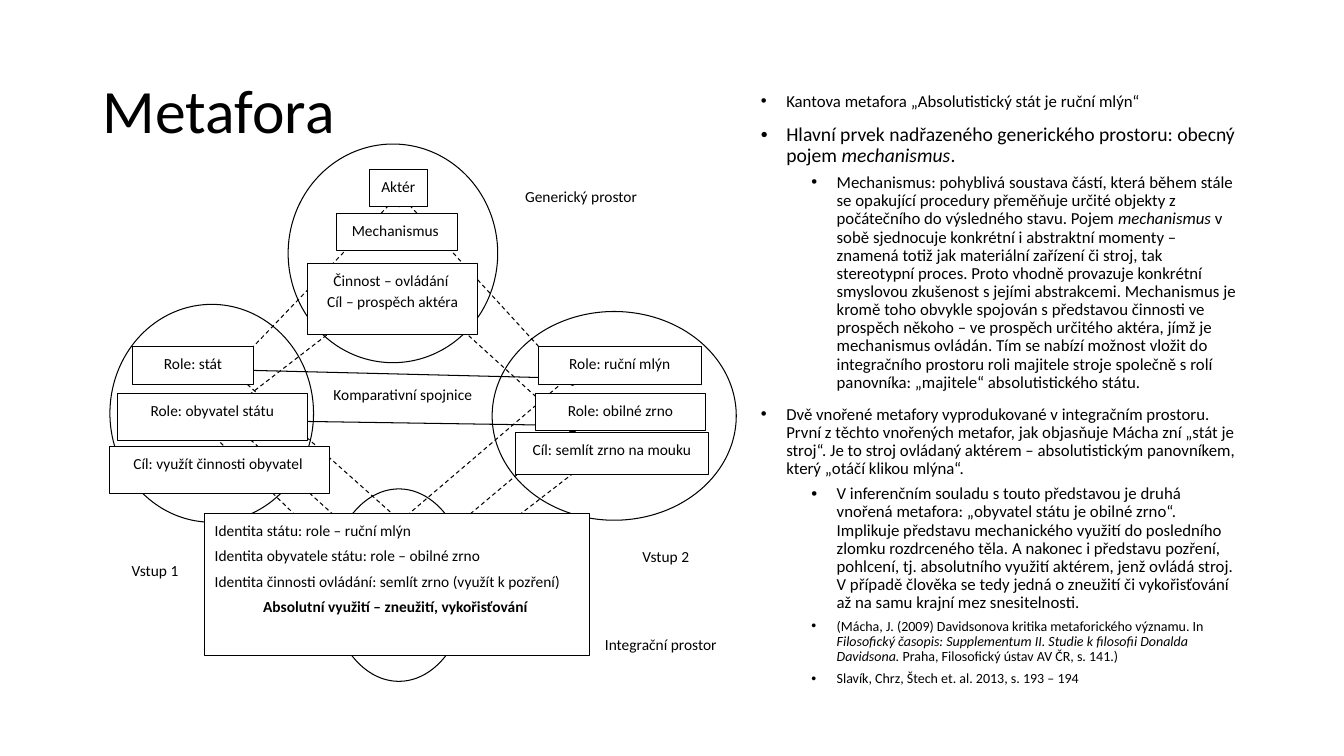
"""Build a slide on metaphor: a conceptual blending diagram beside a bulleted commentary."""
from lxml import etree
from pptx import Presentation
from pptx import util as u
from pptx.dml.color import RGBColor
from pptx.enum import dml, shapes, text
from pptx.oxml.ns import qn

BLACK = RGBColor(0, 0, 0)
WHITE = RGBColor(255, 255, 255)
FONT = "Calibri"
CM_PER_INCH = 2.54
LEFT, CENTER = text.PP_ALIGN.LEFT, text.PP_ALIGN.CENTER

TITLE = ("Metafora", (0.92, 0.4, 11.5, 1.45))
COMMENTARY_PLACE = (7.45, 0.87, 4.96, 5.88)
COMMENTARY = [
    (0, 12, [("Kantova metafora „Absolutistický stát je ruční mlýn“", False)]),
    (0, 14, [("Hlavní prvek nadřazeného generického prostoru: obecný pojem ", False),
             ("mechanismus", True), (".", False)]),
    (1, 12, [("Mechanismus: pohyblivá soustava částí, která během stále se opakující procedury "
              "přeměňuje určité objekty z počátečního do výsledného stavu. Pojem ", False),
             ("mechanismus", True),
             (" v sobě sjednocuje konkrétní i abstraktní momenty – znamená totiž jak materiální "
              "zařízení či stroj, tak stereotypní proces. Proto vhodně provazuje konkrétní "
              "smyslovou zkušenost s jejími abstrakcemi. Mechanismus je kromě toho obvykle "
              "spojován s představou činnosti ve prospěch někoho – ve prospěch určitého aktéra, "
              "jímž je mechanismus ovládán. Tím se nabízí možnost vložit do integračního prostoru "
              "roli majitele stroje společně s rolí panovníka: „majitele“ absolutistického státu.",
              False)]),
    (0, 12, [("Dvě vnořené metafory vyprodukované v integračním prostoru. První z těchto "
              "vnořených metafor, jak objasňuje Mácha zní „stát je stroj“. Je to stroj ovládaný "
              "aktérem – absolutistickým panovníkem, který „otáčí klikou mlýna“.", False)]),
    (1, 12, [("V inferenčním souladu s touto představou je druhá vnořená metafora: „obyvatel "
              "státu je obilné zrno“. Implikuje představu mechanického využití do posledního "
              "zlomku rozdrceného těla. A nakonec i představu pozření, pohlcení, tj. absolutního "
              "využití aktérem, jenž ovládá stroj. V případě člověka se tedy jedná o zneužití či "
              "vykořisťování až na samu krajní mez snesitelnosti.", False)]),
    (1, 10, [("(Mácha, J. (2009) Davidsonova kritika metaforického významu. In ", False),
             ("Filosofický časopis: Supplementum II. Studie k filosofii Donalda Davidsona. ", True),
             ("Praha, Filosofický ústav AV ČR, s. 141.)", False)]),
    (1, 10, [("Slavík, Chrz, Štech et. al. 2013, s. 193 – 194", False)]),
]
LEVELS = [{"indent": 0.25, "space_before": 10}, {"indent": 0.75, "space_before": 5}]
HANGING = 0.25

SPACES = [(2.86, 1.43, 2.08, 2.17), (1.09, 3.02, 2.02, 2.16),
          (4.88, 3.09, 2.42, 2.07), (3.27, 4.85, 1.37, 1.91)]
NODES = [(3.91, 1.91), (5.63, 4.15), (5.63, 3.68)]
NODE_SIZE = (0.1, 0.14)

STATE, MILL, CITIZEN, GRAIN = (2.29, 3.67), (5.63, 3.75), (2.27, 4.17), (5.63, 4.22)
COMPARISONS = [(STATE, MILL), (CITIZEN, GRAIN)]
PROJECTIONS = [
    ((4.01, 1.98), MILL), ((3.98, 5.16), MILL), (STATE, (3.94, 5.14)), (STATE, (3.91, 1.98)),
    ((2.03, 4.24), (3.6, 5.76)), ((4.28, 5.42), (5.65, 4.27)), (CITIZEN, (3.6, 5.37)),
    ((3.92, 2.8), (2.27, 4.07)), ((4.01, 2.75), GRAIN), ((4.24, 5.81), (5.81, 4.6)),
]

LABEL_HEIGHT = 0.41
LABELS = [
    ("Generický prostor", 5.11, 1.78, 1.39, LEFT, WHITE),
    ("Komparativní spojnice", 3.05, 3.74, 1.89, CENTER, None),
    ("Integrační prostor", 5.9, 6.22, 1.39, LEFT, WHITE),
    ("Vstup 2", 5.91, 5.35, 1.39, CENTER, WHITE),
    ("Vstup 1", 1.21, 5.49, 0.98, LEFT, WHITE),
]
ROLES = [
    (["Aktér"], (3.66, 1.68, 0.58, 0.37)),
    (["Mechanismus "], (3.34, 2.12, 1.2, 0.37)),
    (["Činnost – ovládání ", "Cíl – prospěch aktéra"], (3.05, 2.61, 1.69, 0.71)),
    (["Role: ruční mlýn"], (5.34, 3.44, 1.62, 0.37)),
    (["Role: stát"], (1.31, 3.44, 1.21, 0.37)),
    (["Role: obyvatel státu"], (1.16, 3.9, 1.89, 0.47)),
    (["Role: obilné zrno"], (5.31, 3.9, 1.69, 0.37)),
    (["Cíl: semlít zrno na mouku"], (5.11, 4.29, 1.92, 0.42)),
    (["Cíl: využít činnosti obyvatel "], (1.09, 4.43, 2.18, 0.47)),
]
BLEND_PLACE = (2.03, 5.09, 3.82, 1.41)
BLEND = ["Identita státu: role – ruční mlýn",
         "Identita obyvatele státu: role – obilné zrno",
         "Identita činnosti ovládání: semlít zrno (využít k pozření)"]
BLEND_RESULT = "Absolutní využití – zneužití, vykořisťování "


def cm(*inches):
    return [u.Cm(round(length * CM_PER_INCH, 2)) for length in inches]


def apply(target, values):
    for name, value in values.items():
        setattr(target, name, value)


def write(paragraph, runs, size, style, **emphasis):
    apply(paragraph, style)
    for words, italic in runs:
        run = paragraph.add_run()
        run.text = words
        apply(run.font, {"name": FONT, "size": u.Pt(size), "italic": italic, **emphasis})
        run.font.color.rgb = BLACK


def paragraphs(frame, count):
    return [frame.paragraphs[0]] + [frame.add_paragraph() for _ in range(count - 1)]


def add_text_area(parent, place, anchor=text.MSO_ANCHOR.TOP):
    frame = parent.add_textbox(*cm(*place)).text_frame
    apply(frame, {"word_wrap": True, "vertical_anchor": anchor})
    return frame


def add_outline(parent, kind, place, fill=WHITE, outlined=True):
    outline = parent.add_shape(kind, *cm(*place))
    outline.shadow.inherit = False
    outline.fill.solid()
    outline.fill.fore_color.rgb = fill
    if outlined:
        outline.line.color.rgb = BLACK
        outline.line.width = u.Pt(0.75)
    else:
        outline.line.fill.background()
    apply(outline.text_frame, {"word_wrap": True, "vertical_anchor": text.MSO_ANCHOR.TOP})
    return outline.text_frame


def add_link(parent, start, end, dash):
    link = parent.add_connector(shapes.MSO_CONNECTOR.STRAIGHT, *cm(*start, *end))
    link.line.color.rgb = BLACK
    apply(link.line, {"width": u.Pt(0.75), "dash_style": dash})
    etree.SubElement(link.element.spPr, qn("a:effectLst"))


def diagram_style(alignment, after):
    return {"alignment": alignment, "line_spacing": 1.15, "space_after": u.Pt(after)}


def add_commentary(parent):
    frame = add_text_area(parent, COMMENTARY_PLACE)
    for paragraph, (level, size, runs) in zip(paragraphs(frame, len(COMMENTARY)), COMMENTARY):
        rule = LEVELS[level]
        write(paragraph, runs, size, {"level": level, "line_spacing": 0.9,
                                      "space_before": u.Pt(rule["space_before"])})
        properties = paragraph._p.get_or_add_pPr()
        margin, hanging = cm(rule["indent"], HANGING)
        properties.set("marL", str(margin))
        properties.set("indent", str(-hanging))
        etree.SubElement(properties, qn("a:buFont"), typeface="Arial")
        etree.SubElement(properties, qn("a:buChar"), char="•")


def add_diagram(parent):
    oval, box = shapes.MSO_SHAPE.OVAL, shapes.MSO_SHAPE.RECTANGLE
    for place in SPACES:
        add_outline(parent, oval, place)
    for node in NODES:
        add_outline(parent, oval, node + NODE_SIZE, BLACK)
    for links, dash in ((COMPARISONS, dml.MSO_LINE.SOLID), (PROJECTIONS, dml.MSO_LINE.DASH)):
        for start, end in links:
            add_link(parent, start, end, dash)
    for label, left, top, width, alignment, fill in LABELS:
        place = (left, top, width, LABEL_HEIGHT)
        frame = (add_outline(parent, box, place, fill, outlined=False) if fill
                 else add_text_area(parent, place))
        write(frame.paragraphs[0], [(label, False)], 11, diagram_style(alignment, 10))
    for role, place in ROLES:
        frame = add_outline(parent, box, place)
        for paragraph, words in zip(paragraphs(frame, len(role)), role):
            write(paragraph, [(words, False)], 11, diagram_style(CENTER, 0))
    frame = add_outline(parent, box, BLEND_PLACE)
    *identities, result = paragraphs(frame, len(BLEND) + 1)
    for paragraph, words in zip(identities, BLEND):
        write(paragraph, [(words, False)], 11, diagram_style(LEFT, 3))
    write(result, [(BLEND_RESULT, False)], 11, diagram_style(CENTER, 3), bold=True)


def main():
    deck = Presentation()
    deck.slide_width, deck.slide_height = cm(13.33, 7.5)
    slide = deck.slides.add_slide(deck.slide_layouts[6])
    heading, place = TITLE
    frame = add_text_area(slide.shapes, place, text.MSO_ANCHOR.MIDDLE)
    write(frame.paragraphs[0], [(heading, False)], 44, {"line_spacing": 0.9})
    add_commentary(slide.shapes)
    add_diagram(slide.shapes.add_group_shape().shapes)
    deck.save("out.pptx")


if __name__ == "__main__":
    main()
